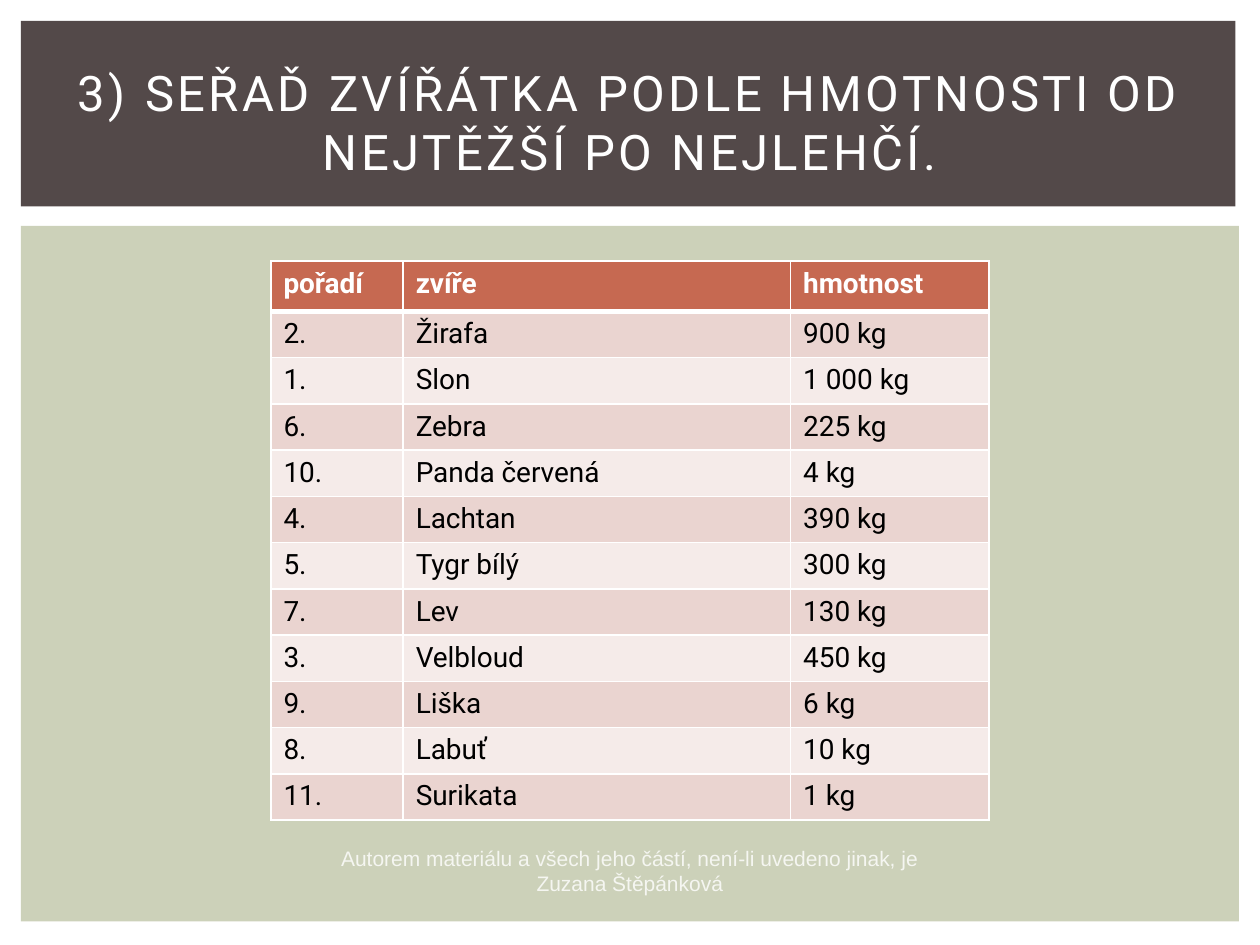
"""Build a slide with a table of animals to be ranked by weight."""
from lxml.etree import SubElement
from pptx import Presentation
from pptx.dml.color import RGBColor
from pptx.enum.shapes import MSO_SHAPE
from pptx.enum.text import MSO_ANCHOR, PP_ALIGN
from pptx.oxml.ns import qn
from pptx.util import Pt

WHITE = RGBColor(0xFF, 0xFF, 0xFF)
BLACK = RGBColor(0x00, 0x00, 0x00)
SAGE = RGBColor(0xCC, 0xD1, 0xB9)
BROWN = RGBColor(0x53, 0x49, 0x49)
PALE = RGBColor(0xF5, 0xF6, 0xF1)
RUST = RGBColor(0xC6, 0x69, 0x51)
BANDS = (RGBColor(0xEA, 0xD4, 0xD0), RGBColor(0xF5, 0xEB, 0xE9))

TITLE_FORMAT = {"name": "Roboto", "size": Pt(28)}
FOOTER_FORMAT = {"name": "Arial", "size": Pt(12)}
HEADER_FORMAT = {"name": "Roboto", "size": Pt(16), "bold": True}
BODY_FORMAT = {"name": "Roboto", "size": Pt(16), "bold": False}

TITLE = "3) SEŘAĎ ZVÍŘÁTKA PODLE HMOTNOSTI OD NEJTĚŽŠÍ PO NEJLEHČÍ."
FOOTER = "Autorem materiálu a všech jeho částí, není-li uvedeno jinak, je Zuzana Štěpánková"
ANIMALS = [
    ("pořadí", "zvíře", "hmotnost"),
    ("2.", "Žirafa", "900 kg"),
    ("1.", "Slon", "1 000 kg"),
    ("6.", "Zebra", "225 kg"),
    ("10.", "Panda červená", "4 kg"),
    ("4.", "Lachtan", "390 kg"),
    ("5.", "Tygr bílý", "300 kg"),
    ("7.", "Lev", "130 kg"),
    ("3.", "Velbloud", "450 kg"),
    ("9.", "Liška", "6 kg"),
    ("8.", "Labuť", "10 kg"),
    ("11.", "Surikata", "1 kg"),
]
COLUMN_WIDTHS = (75.6, 221.4, 113.4)
HEADER_HEIGHT, ROW_HEIGHT = 28.8, 26.4


def write(paragraph, words, font_format, color):
    """Add a formatted run to the paragraph and return it."""
    run = paragraph.add_run()
    run.text = words
    for attribute, value in font_format.items():
        setattr(run.font, attribute, value)
    run.font.color.rgb = color
    return run


def add_panel(slide, left, top, width, height, color):
    """Add a plain filled rectangle."""
    panel = slide.shapes.add_shape(
        MSO_SHAPE.RECTANGLE, Pt(left), Pt(top), Pt(width), Pt(height))
    panel.shadow.inherit = False
    panel.fill.solid()
    panel.fill.fore_color.rgb = color
    panel.line.fill.background()


def add_caption(slide, left, top, width, height, words, font_format, color, anchor):
    """Add centred, wrapped text and return its run."""
    frame = slide.shapes.add_textbox(
        Pt(left), Pt(top), Pt(width), Pt(height)).text_frame
    frame.word_wrap = True
    frame.vertical_anchor = anchor
    paragraph = frame.paragraphs[0]
    paragraph.alignment = PP_ALIGN.CENTER
    return write(paragraph, words, font_format, color)


def add_borders(cell, widths):
    """Draw white cell borders, given their widths by side."""
    properties = cell._tc.get_or_add_tcPr()
    for side, width in widths.items():
        border = SubElement(properties, qn(f"a:ln{side}"), w=str(Pt(width)))
        fill = SubElement(border, qn("a:solidFill"))
        SubElement(fill, qn("a:srgbClr"), val=str(WHITE))


def fill_cell(cell, words, row):
    """Style one cell according to its row and write its words."""
    is_header = row == 0
    add_borders(cell, {"L": 1, "R": 1, "T": 3 if row == 1 else 1,
                       "B": 3 if is_header else 1})
    cell.fill.solid()
    cell.fill.fore_color.rgb = RUST if is_header else BANDS[(row - 1) % 2]
    write(cell.text_frame.paragraphs[0], words,
          HEADER_FORMAT if is_header else BODY_FORMAT,
          WHITE if is_header else BLACK)


def add_animal_table(slide, left, top):
    """Add the table of animals with banded rows."""
    height = HEADER_HEIGHT + ROW_HEIGHT * (len(ANIMALS) - 1)
    table = slide.shapes.add_table(
        len(ANIMALS), len(COLUMN_WIDTHS), Pt(left), Pt(top),
        Pt(sum(COLUMN_WIDTHS)), Pt(height)).table
    for column, width in zip(table.columns, COLUMN_WIDTHS):
        column.width = Pt(width)
    for row, animal in enumerate(ANIMALS):
        table.rows[row].height = Pt(ROW_HEIGHT if row else HEADER_HEIGHT)
        for column, words in enumerate(animal):
            fill_cell(table.cell(row, column), words, row)


def main():
    """Build and save the slide."""
    presentation = Presentation()
    presentation.slide_width, presentation.slide_height = Pt(720), Pt(540)
    slide = presentation.slides.add_slide(presentation.slide_layouts[6])
    add_panel(slide, 12, 129, 696, 397.5, SAGE)
    add_panel(slide, 12, 12, 694, 106, BROWN)
    title = add_caption(slide, 30, 28, 660, 83, TITLE, TITLE_FORMAT, WHITE,
                        MSO_ANCHOR.MIDDLE)
    title.font._element.set("spc", "200")
    add_caption(slide, 180, 479.5, 360, 36, FOOTER, FOOTER_FORMAT, PALE,
                MSO_ANCHOR.TOP)
    add_animal_table(slide, 154.8, 149.2)
    presentation.save("out.pptx")


if __name__ == "__main__":
    main()
